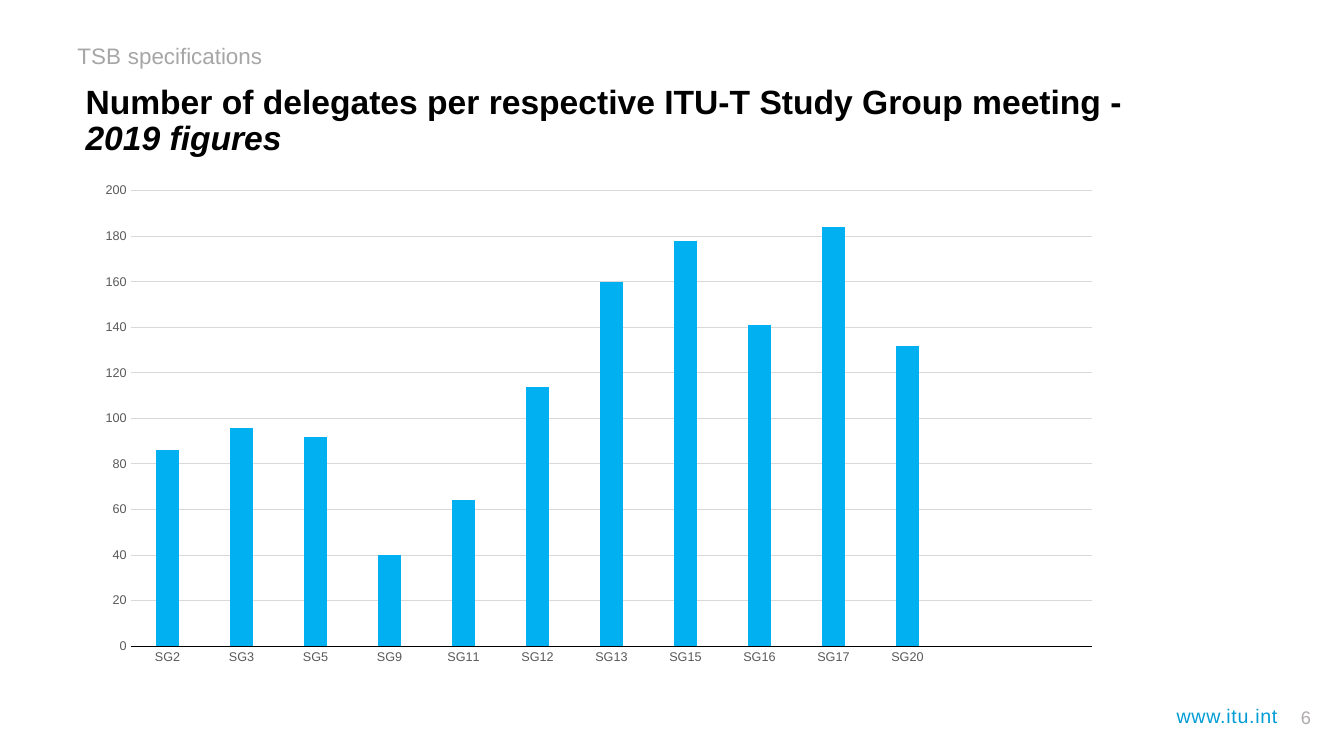
"""Build a slide with a column chart of delegates per study group meeting."""
from lxml import etree
from pptx import Presentation
from pptx.chart.data import CategoryChartData
from pptx.dml.color import RGBColor
from pptx.enum.chart import XL_CHART_TYPE, XL_TICK_MARK
from pptx.enum.text import PP_ALIGN
from pptx.oxml.ns import qn
from pptx.util import Inches, Pt

COLUMN_CLUSTERED = XL_CHART_TYPE.COLUMN_CLUSTERED
NO_TICK = XL_TICK_MARK.NONE
LEFT = PP_ALIGN.LEFT
RIGHT = PP_ALIGN.RIGHT

FONT = "Arial"
BLANK_LAYOUT = 6
DELEGATES = {
    "SG2": 86, "SG3": 96, "SG5": 92, "SG9": 40, "SG11": 64, "SG12": 114,
    "SG13": 160, "SG15": 178, "SG16": 141, "SG17": 184, "SG20": 132,
}
EMPTY_SLOTS = 2
PLOT_LAYOUT = {
    "layoutTarget": "inner", "xMode": "edge", "yMode": "edge",
    "x": 0.053, "y": 0.028, "w": 0.929, "h": 0.886,
}


def color(hex_value):
    """Return the colour for a hex string."""
    return RGBColor.from_string(hex_value)


def style_font(font, size, hex_value, bold=False):
    """Set typeface, size, colour and weight of a font."""
    font.name = FONT
    font.size = Pt(size)
    font.bold = bold
    font.color.rgb = color(hex_value)


def add_text(slide, box, runs, hex_value, align=LEFT, bold=False):
    """Add a one-paragraph text box from (text, size) runs."""
    shape = slide.shapes.add_textbox(*map(Inches, box))
    shape.text_frame.word_wrap = True
    paragraph = shape.text_frame.paragraphs[0]
    paragraph.alignment = align
    for text, size in runs:
        run = paragraph.add_run()
        run.text = text
        style_font(run.font, size, hex_value, bold)
    return paragraph


def style_axis(axis):
    """Remove tick marks and set the label font of an axis."""
    axis.major_tick_mark = NO_TICK
    axis.minor_tick_mark = NO_TICK
    style_font(axis.tick_labels.font, 9, "595959")


def style_line(line, hex_value):
    """Give a chart line its colour and width."""
    line.color.rgb = color(hex_value)
    line.width = Pt(0.75)


def place_plot(chart):
    """Fix the inner plot area within the chart frame."""
    plot_area = chart.plots[0]._element.getparent()
    for old_layout in plot_area.findall(qn("c:layout")):
        plot_area.remove(old_layout)
    layout = etree.Element(qn("c:layout"))
    manual = etree.SubElement(layout, qn("c:manualLayout"))
    for name, value in PLOT_LAYOUT.items():
        etree.SubElement(manual, qn(f"c:{name}")).set("val", str(value))
    plot_area.insert(0, layout)


def add_delegate_chart(slide, box):
    """Add the column chart of delegates per study group."""
    data = CategoryChartData()
    data.categories = [*DELEGATES, *[""] * EMPTY_SLOTS]
    data.add_series("Series 1", [*DELEGATES.values(), *[None] * EMPTY_SLOTS])
    frame = slide.shapes.add_chart(COLUMN_CLUSTERED, *map(Inches, box), data)
    chart = frame.chart
    chart.has_legend = False
    chart.has_title = False
    style_font(chart.font, 15, "000000", bold=True)

    plot = chart.plots[0]
    plot.gap_width = 219
    plot.overlap = -27
    plot.vary_by_categories = False
    fill = plot.series[0].format.fill
    fill.solid()
    fill.fore_color.rgb = color("00B0F0")

    style_axis(chart.category_axis)
    style_line(chart.category_axis.format.line, "000000")
    value_axis = chart.value_axis
    style_axis(value_axis)
    value_axis.minimum_scale = 0
    value_axis.maximum_scale = 200
    value_axis.major_unit = 20
    value_axis.format.line.fill.background()
    style_line(value_axis.major_gridlines.format.line, "D9D9D9")
    place_plot(chart)


def main():
    """Build the slide and save it."""
    presentation = Presentation()
    presentation.slide_width = Inches(13.33)
    presentation.slide_height = Inches(7.5)
    slide = presentation.slides.add_slide(presentation.slide_layouts[BLANK_LAYOUT])

    website = add_text(slide, (10.04, 6.93, 2.73, 0.34),
                       [("www.itu.int", 14)], "009CD6", RIGHT)
    website.runs[0].font._element.set("spc", "50")
    add_text(slide, (12.49, 6.96, 0.61, 0.32), [("6", 13)], "AFABAB", RIGHT)
    add_delegate_chart(slide, (0.75, 1.75, 10.27, 5.1))
    title = add_text(
        slide, (0.75, 0.8, 10.81, 0.83),
        [("Number of delegates per respective ITU-T Study Group meeting - ", 24),
         ("2019 figures", 24)],
        "000000", bold=True)
    title.line_spacing = 0.9
    title.runs[1].font.italic = True
    add_text(slide, (0.67, 0.34, 4.98, 0.34),
             [("TSB", 16), (" ", 18), ("specifications", 16)], "A6A6A6")

    presentation.save("out.pptx")


if __name__ == "__main__":
    main()
